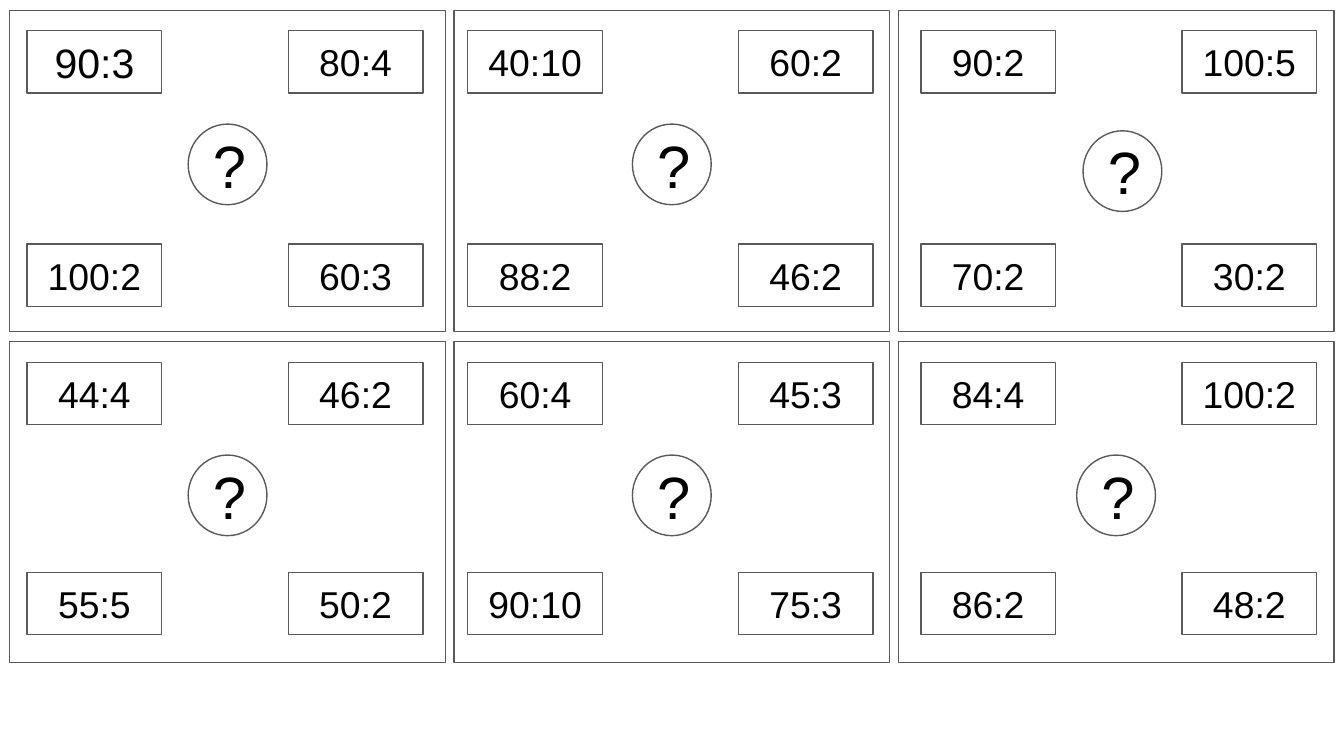
from pptx import Presentation
from pptx.dml.color import RGBColor
from pptx.enum.shapes import MSO_SHAPE
from pptx.enum.text import MSO_ANCHOR, PP_ALIGN
from pptx.util import Pt

RECTANGLE, OVAL = MSO_SHAPE.RECTANGLE, MSO_SHAPE.OVAL
MIDDLE, CENTER = MSO_ANCHOR.MIDDLE, PP_ALIGN.CENTER

COLORS = {"fill": "FFFFFF", "line": "595959", "text": "000000"}
FONT = "Arial"

# Card grid, in points
CARD_LEFT, CARD_TOP = 5.2, 5.6
CARD_WIDTH, CARD_HEIGHT = 233.4, 172
COLUMN_STEP, ROW_STEP = 238, 177.3
TASK_WIDTH, TASK_HEIGHT = 72.2, 33.4
CIRCLE_WIDTH, CIRCLE_HEIGHT = 42.2, 43.2

# Offsets of the task boxes inside a card, per column and per row
TASK_LEFTS = [(9.3, 149.2), (7.4, 152.3), (12.1, 152)]
TASK_TOPS = [(10.9, 125.1), (11.2, 123.7)]
CIRCLE_TOP = 60.9
CIRCLE_SHIFTS = {(0, 2): (3.4, 3.6)}  # this circle sits off the common place

# Tasks by row and column: top left, top right, bottom left, bottom right
CARDS = [
    [("90:3", "80:4", "100:2", "60:3"),
     ("40:10", "60:2", "88:2", "46:2"),
     ("90:2", "100:5", "70:2", "30:2")],
    [("44:4", "46:2", "55:5", "50:2"),
     ("60:4", "45:3", "90:10", "75:3"),
     ("84:4", "100:2", "86:2", "48:2")],
]
LARGE_TASK = "90:3"


def color(name):
    return RGBColor.from_string(COLORS[name])


def add_outline(page, kind, left, top, width, height):
    shape = page.shapes.add_shape(kind, Pt(left), Pt(top), Pt(width), Pt(height))
    shape.shadow.inherit = False
    shape.fill.solid()
    shape.fill.fore_color.rgb = color("fill")
    shape.line.color.rgb = color("line")
    shape.line.width = Pt(0.75)
    return shape


def write_text(shape, text, size=20, align=CENTER, anchor=MIDDLE, inset=7.2):
    frame = shape.text_frame
    frame.word_wrap = True
    frame.vertical_anchor = anchor
    frame.margin_left = frame.margin_right = Pt(inset)
    frame.margin_top = frame.margin_bottom = Pt(inset)
    para = frame.paragraphs[0]
    para.alignment = align
    span = para.add_run()
    span.text = text
    span.font.name = FONT
    span.font.size = Pt(size)
    span.font.color.rgb = color("text")


def add_card(page, left, top, width, height, tasks, task_lefts, task_tops, shift):
    add_outline(page, RECTANGLE, left, top, width, height)

    # Four division tasks in the corners
    corners = [(x, y) for y in task_tops for x in task_lefts]
    for task, (x, y) in zip(tasks, corners):
        box = add_outline(page, RECTANGLE, left + x, top + y, TASK_WIDTH, TASK_HEIGHT)
        write_text(box, task, size=22 if task == LARGE_TASK else 20)

    # Question mark between them
    shift_x, shift_y = shift
    circle = add_outline(page, OVAL,
                         left + (width - CIRCLE_WIDTH) / 2 + shift_x,
                         top + CIRCLE_TOP + shift_y,
                         CIRCLE_WIDTH, CIRCLE_HEIGHT)
    write_text(circle, "?", size=32)


def main():
    deck = Presentation()
    deck.slide_width, deck.slide_height = Pt(720), Pt(405)
    page = deck.slides.add_slide(deck.slide_layouts[6])
    for row, cards in enumerate(CARDS):
        for column, tasks in enumerate(cards):
            add_card(page,
                     CARD_LEFT + column * COLUMN_STEP, CARD_TOP + row * ROW_STEP,
                     CARD_WIDTH, CARD_HEIGHT, tasks,
                     TASK_LEFTS[column], TASK_TOPS[row],
                     CIRCLE_SHIFTS.get((row, column), (0, 0)))
    deck.save("out.pptx")


if __name__ == "__main__":
    main()
